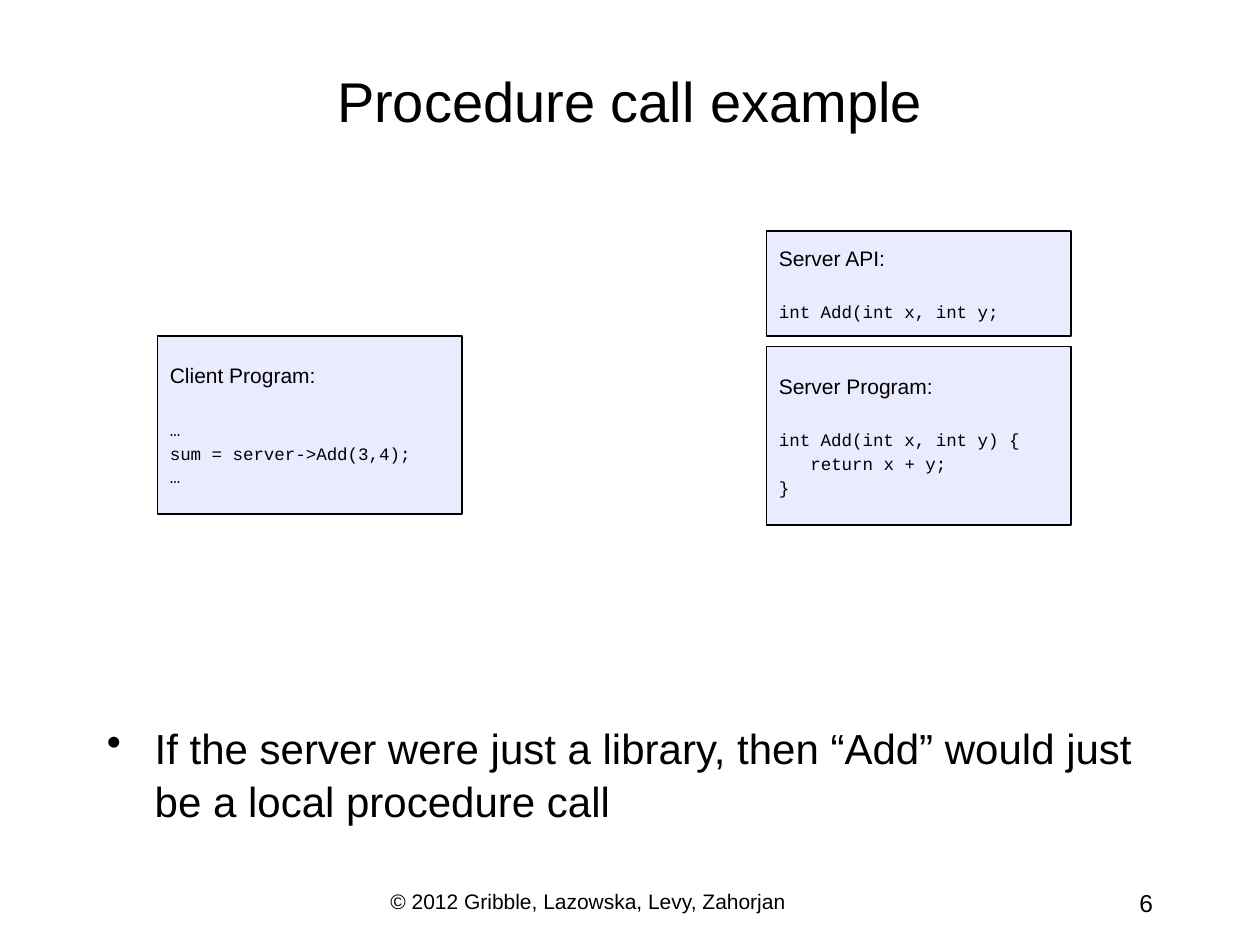
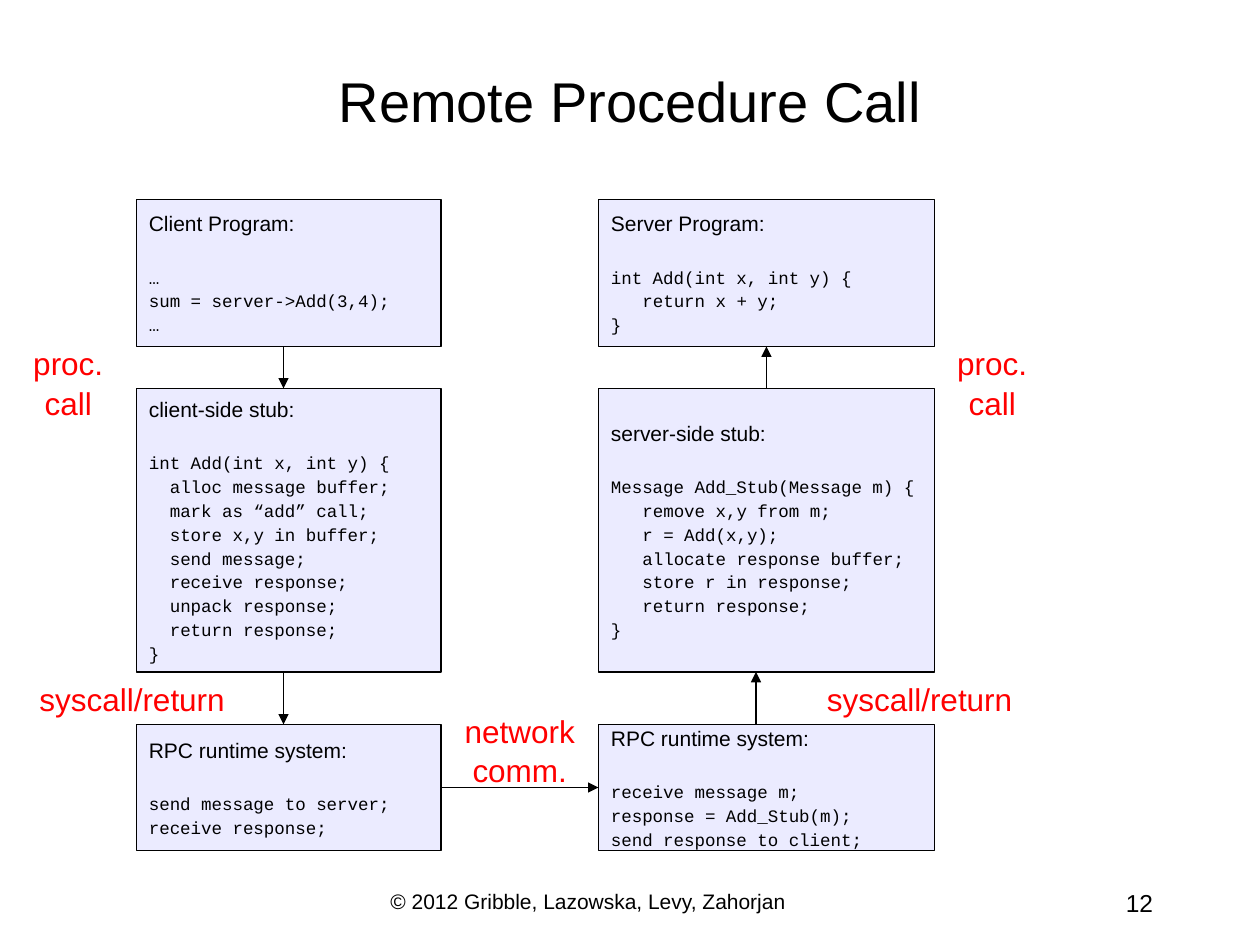
from dataclasses import dataclass

from lxml import etree
from pptx import Presentation
from pptx.dml.color import RGBColor
from pptx.enum.shapes import MSO_CONNECTOR, MSO_SHAPE
from pptx.enum.text import MSO_ANCHOR, MSO_AUTO_SIZE, PP_ALIGN
from pptx.oxml.ns import qn
from pptx.util import Inches, Pt

LEFT, CENTER, RIGHT = PP_ALIGN.LEFT, PP_ALIGN.CENTER, PP_ALIGN.RIGHT
TOP, MIDDLE = MSO_ANCHOR.TOP, MSO_ANCHOR.MIDDLE
NO_FIT = MSO_AUTO_SIZE.NONE
RECTANGLE = MSO_SHAPE.RECTANGLE
STRAIGHT = MSO_CONNECTOR.STRAIGHT
TITLE_ONLY = 5
COLUMNS, ROWS = 120, 90


@dataclass(frozen=True)
class Theme:
    ink: RGBColor = RGBColor(0, 0, 0)
    panel: RGBColor = RGBColor(0xEB, 0xEB, 0xFF)
    accent: RGBColor = RGBColor(0xFF, 0, 0)
    text_font: str = "Arial"
    code_font: str = "Courier New"
    title_size: int = 32
    body_size: int = 24
    label_size: int = 18
    number_size: int = 14
    small_size: int = 12
    code_size: int = 10
    heading_gap: float = 2
    code_gap: float = 17.5
    line_gap: float = 1.6
    code_character: int = 6
    leading: float = 1.05


class Deck:
    def __init__(self, theme):
        self.theme = theme
        self.presentation = Presentation()
        self.presentation.slide_width = Inches(10)
        self.presentation.slide_height = Inches(7.5)
        self.slide = None

    def place(self, column, row, width, height):
        across = self.presentation.slide_width / COLUMNS
        down = self.presentation.slide_height / ROWS
        return [round(n) for n in (column * across, row * down, width * across, height * down)]

    def style(self, paragraph, size, color=None, font=None, align=LEFT, before=0):
        paragraph.alignment = align
        paragraph.space_before = Pt(before)
        paragraph.font.size = Pt(size)
        paragraph.font.name = font or self.theme.text_font
        paragraph.font.color.rgb = color or self.theme.ink

    def start(self, title, number):
        layout = self.presentation.slide_layouts[TITLE_ONLY]
        self.slide = self.presentation.slides.add_slide(layout)
        shape = self.slide.shapes.title
        shape.left, shape.top, shape.width, shape.height = self.place(9, 5, 102, 9)
        frame = shape.text_frame
        frame.text = title
        frame.auto_size = NO_FIT
        frame.vertical_anchor = MIDDLE
        self.style(frame.paragraphs[0], self.theme.title_size, align=CENTER)
        self.text("© 2012 Gribble, Lazowska, Levy, Zahorjan", (36, 84, 48, 4), self.theme.small_size)
        self.text(number, (86, 84, 25, 4), self.theme.number_size, align=RIGHT)

    def text(self, words, area, size, **style):
        frame = self.slide.shapes.add_textbox(*self.place(*area)).text_frame
        frame.word_wrap = True
        frame.vertical_anchor = TOP
        paragraph = frame.paragraphs[0]
        paragraph.text = words
        self.style(paragraph, size, **style)
        return paragraph

    def label(self, words, area):
        paragraph = self.text(words, area, self.theme.label_size, color=self.theme.accent,
                              align=CENTER, before=self.theme.heading_gap)
        paragraph.line_spacing = self.theme.leading

    def bullet(self, words, area):
        paragraph = self.text(words, area, self.theme.body_size, before=self.theme.heading_gap)
        paragraph.line_spacing = self.theme.leading
        properties = paragraph._p.get_or_add_pPr()
        properties.set("marL", str(Inches(0.38)))
        properties.set("indent", str(-Inches(0.38)))
        mark = properties.makeelement(qn("a:buChar"), {"char": "•"})
        properties.find(qn("a:defRPr")).addprevious(mark)

    def panel(self, heading, code, area):
        theme = self.theme
        shape = self.slide.shapes.add_shape(RECTANGLE, *self.place(*area))
        shape.shadow.inherit = False
        shape.fill.solid()
        shape.fill.fore_color.rgb = theme.panel
        shape.line.color.rgb = theme.ink
        shape.line.width = Pt(1)
        frame = shape.text_frame
        frame.word_wrap = True
        frame.vertical_anchor = MIDDLE
        frame.paragraphs[0].text = heading
        self.style(frame.paragraphs[0], theme.small_size, before=theme.heading_gap)
        for index, line in enumerate(code.split("\n")):
            words = line.lstrip()
            paragraph = frame.add_paragraph()
            paragraph.text = words
            self.style(paragraph, theme.code_size, font=theme.code_font,
                       before=theme.line_gap if index else theme.code_gap)
            indent = Pt(theme.code_character * (len(line) - len(words)))
            paragraph._p.get_or_add_pPr().set("marL", str(indent))

    def arrow(self, start, end):
        ends = self.place(*start, *end)
        connector = self.slide.shapes.add_connector(STRAIGHT, *ends)
        connector.line.color.rgb = self.theme.ink
        connector.line.width = Pt(1)
        etree.SubElement(connector.line._get_or_add_ln(), qn("a:tailEnd"), type="triangle")
        etree.SubElement(connector._element.spPr, qn("a:effectLst"))


CLIENT_PROGRAM = ("Client Program:", "…\nsum = server->Add(3,4);\n…")
SERVER_PROGRAM = ("Server Program:", "int Add(int x, int y) {\n   return x + y;\n}")
SERVER_API = ("Server API:", "int Add(int x, int y;")
CLIENT_STUB = ("client-side stub:", """int Add(int x, int y) {
  alloc message buffer;
  mark as “add” call;
  store x,y in buffer;
  send message;
  receive response;
  unpack response;
  return response;
}""")
SERVER_STUB = ("server-side stub:", """Message Add_Stub(Message m) {
   remove x,y from m;
   r = Add(x,y);
   allocate response buffer;
   store r in response;
   return response;
}""")
CLIENT_RUNTIME = ("RPC runtime system:", "send message to server;\nreceive response;")
SERVER_RUNTIME = ("RPC runtime system:",
                  "receive message m;\nresponse = Add_Stub(m);\nsend response to client;")


def procedure_call(deck):
    deck.start("Procedure call example", "6")
    deck.bullet("If the server were just a library, then “Add” would just be a local procedure call",
                (9, 68, 102, 14))
    deck.panel(*CLIENT_PROGRAM, (15, 32, 29, 17))
    deck.panel(*SERVER_PROGRAM, (73, 33, 29, 17))
    deck.panel(*SERVER_API, (73, 22, 29, 10))


def remote_procedure_call(deck):
    deck.start("Remote Procedure Call", "12")
    layers = [(19, 14), (37, 27), (69, 12)]
    sides = [(13, 29, (CLIENT_PROGRAM, CLIENT_STUB, CLIENT_RUNTIME)),
             (57, 32, (SERVER_PROGRAM, SERVER_STUB, SERVER_RUNTIME))]
    for column, width, panels in sides:
        for panel, (row, height) in zip(panels, layers):
            deck.panel(*panel, (column, row, width, height))

    gaps = [(row + height, below) for (row, height), (below, _) in zip(layers, layers[1:])]
    for (upper, lower), server_column in zip(gaps, (73, 72)):
        deck.arrow((27, upper), (27, lower))
        deck.arrow((server_column, lower), (server_column, upper))
    deck.arrow((42, 75), (57, 75))

    for column in (1, 89):
        deck.label("proc. call", (column, 32, 11, 8.5))
    for column, width in ((2, 22), (76, 24)):
        deck.label("syscall/return ", (column, 64, width, 4.8))
    deck.label("network comm.", (40, 67, 19, 8.5))


def main():
    deck = Deck(Theme())
    procedure_call(deck)
    remote_procedure_call(deck)
    deck.presentation.save("out.pptx")


if __name__ == "__main__":
    main()
